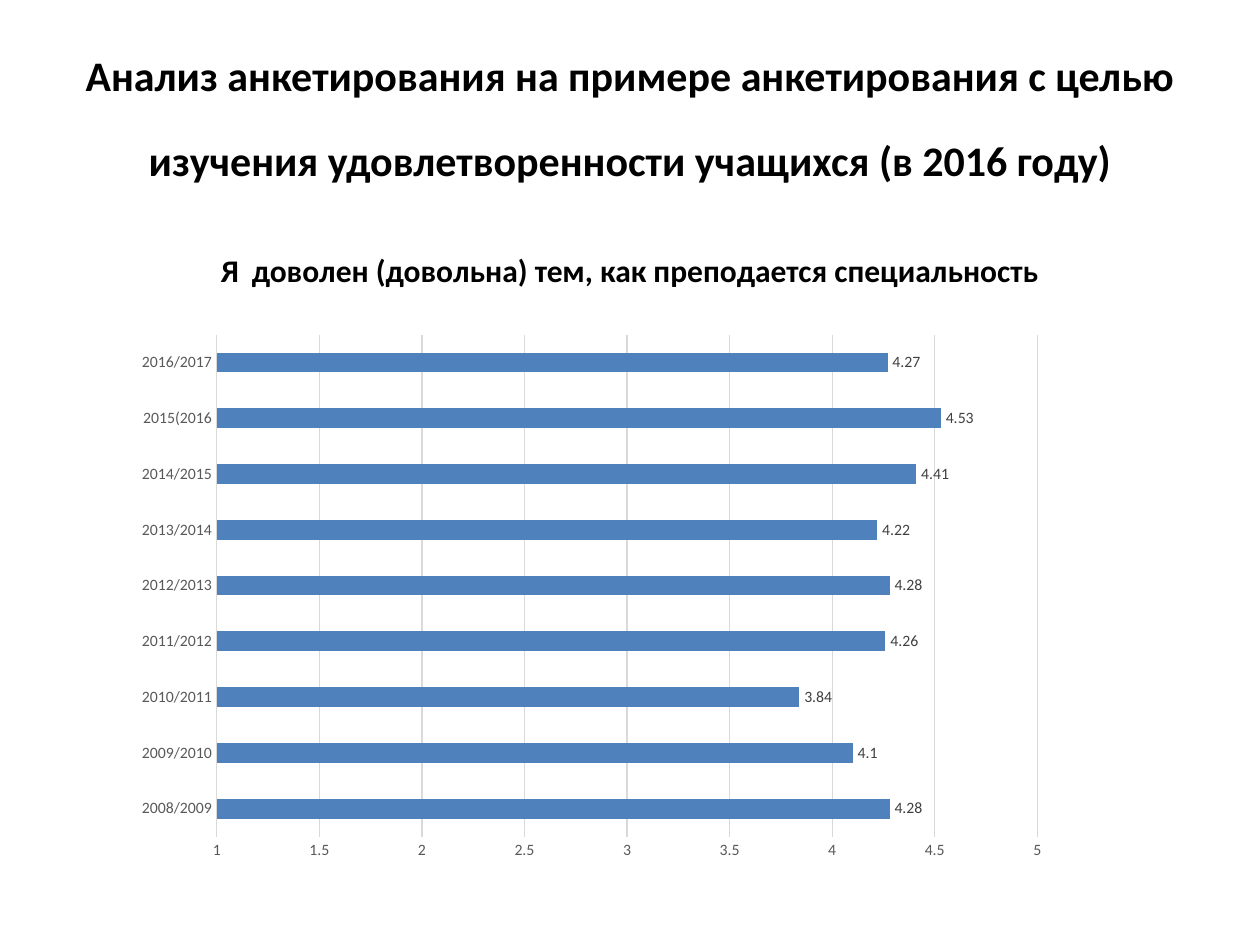
from typing import NamedTuple

from lxml.etree import SubElement
from pptx import Presentation
from pptx.chart.axis import _BaseAxis
from pptx.chart.data import CategoryChartData
from pptx.dml.color import RGBColor
from pptx.enum.chart import XL_CHART_TYPE, XL_LABEL_POSITION, XL_TICK_MARK
from pptx.enum.text import MSO_ANCHOR, MSO_AUTO_SIZE, PP_ALIGN
from pptx.oxml.ns import qn
from pptx.text.text import Font, _Paragraph
from pptx.util import Pt

BLACK = RGBColor(0x00, 0x00, 0x00)
LABEL_GRAY = RGBColor(0x40, 0x40, 0x40)
AXIS_GRAY = RGBColor(0x59, 0x59, 0x59)
GRID_GRAY = RGBColor(0xD9, 0xD9, 0xD9)
BAR_BLUE = RGBColor(0x4F, 0x81, 0xBD)
FONT_NAME = "Calibri"


class Rating(NamedTuple):
    school_year: str
    score: float


RATINGS = [
    Rating("2008/2009", 4.28),
    Rating("2009/2010", 4.1),
    Rating("2010/2011", 3.84),
    Rating("2011/2012", 4.26),
    Rating("2012/2013", 4.28),
    Rating("2013/2014", 4.22),
    Rating("2014/2015", 4.41),
    Rating("2015(2016", 4.53),
    Rating("2016/2017", 4.27),
]


def set_font(font: Font, size: float, color: RGBColor, bold: bool = False) -> None:
    font.name = FONT_NAME
    font.size = Pt(size)
    font.bold = bold
    font.color.rgb = color


def add_span(para: _Paragraph, text: str, *, size: float, bold: bool = True) -> None:
    span = para.add_run()
    span.text = text
    set_font(span.font, size, BLACK, bold)


def place(box, left: float, top: float, width: float, height: float) -> None:
    box.left, box.top, box.width, box.height = map(Pt, (left, top, width, height))


def fill_title(box) -> None:
    place(box, 36, 21.6, 648, 90)
    frame = box.text_frame
    frame.auto_size = MSO_AUTO_SIZE.NONE
    frame.vertical_anchor = MSO_ANCHOR.MIDDLE
    frame.margin_top, frame.margin_bottom = Pt(0), Pt(19)
    para = frame.paragraphs[0]
    para.alignment = PP_ALIGN.CENTER
    para.line_spacing = Pt(48.6)
    add_span(
        para,
        "Анализ анкетирования на примере анкетирования с целью "
        "изучения удовлетворенности учащихся (в 2016 году)",
        size=24,
    )


def fill_question(box) -> None:
    place(box, 36, 126, 648, 356.4)
    box.text_frame.auto_size = MSO_AUTO_SIZE.NONE
    para = box.text_frame.paragraphs[0]
    para.alignment = PP_ALIGN.CENTER
    properties = para._p.get_or_add_pPr()
    properties.set("marL", "0")
    properties.set("indent", "0")
    SubElement(properties, qn("a:buNone"))
    add_span(para, "Я", size=18)
    add_span(para, " ", size=32)
    add_span(para, "доволен (довольна) тем, как преподается специальность", size=18)


def style_axis(axis: _BaseAxis) -> None:
    axis.major_tick_mark = XL_TICK_MARK.NONE
    axis.minor_tick_mark = XL_TICK_MARK.NONE
    set_font(axis.tick_labels.font, 9, AXIS_GRAY)


def set_plot_layout(chart, **fractions: float) -> None:
    """Fix the inner plot area as fractions (x, y, w, h) of the chart."""
    plot_area = chart._chartSpace.chart.plotArea
    for old in plot_area.findall(qn("c:layout")):
        plot_area.remove(old)
    layout = SubElement(plot_area, qn("c:layout"))
    plot_area.insert(0, layout)
    manual = SubElement(layout, qn("c:manualLayout"))
    settings = {"layoutTarget": "inner", "xMode": "edge", "yMode": "edge", **fractions}
    for name, value in settings.items():
        SubElement(manual, qn(f"c:{name}")).set("val", str(value))


def add_rating_chart(page) -> None:
    data = CategoryChartData()
    data.categories = [rating.school_year for rating in RATINGS]
    data.add_series("Series 1", [rating.score for rating in RATINGS])
    chart = page.shapes.add_chart(
        XL_CHART_TYPE.BAR_CLUSTERED, Pt(70.6), Pt(185), Pt(532.8), Pt(311.8), data
    ).chart
    chart.has_title = False
    chart.has_legend = False
    set_font(chart.font, 10, BLACK)
    set_plot_layout(chart, x=0.1, y=0.02, w=0.88, h=0.92)

    years, scores = chart.category_axis, chart.value_axis
    style_axis(years)
    years.format.line.color.rgb = GRID_GRAY
    years.format.line.width = Pt(0.75)
    style_axis(scores)
    scores.format.line.fill.background()
    scores.minimum_scale, scores.maximum_scale, scores.major_unit = 1, 5, 0.5
    scores.has_major_gridlines = True
    scores.major_gridlines.format.line.color.rgb = GRID_GRAY
    scores.major_gridlines.format.line.width = Pt(0.75)

    plot = chart.plots[0]
    plot.gap_width = 182
    plot.vary_by_categories = False
    series = plot.series[0]
    series.format.fill.solid()
    series.format.fill.fore_color.rgb = BAR_BLUE
    labels = series.data_labels
    labels.show_value = True
    labels.position = XL_LABEL_POSITION.OUTSIDE_END
    set_font(labels.font, 9, LABEL_GRAY)


def main() -> None:
    deck = Presentation()
    deck.slide_width, deck.slide_height = Pt(720), Pt(540)
    page = deck.slides.add_slide(deck.slide_layouts[1])
    fill_title(page.shapes.title)
    fill_question(page.placeholders[1])
    add_rating_chart(page)
    deck.save("out.pptx")


if __name__ == "__main__":
    main()
